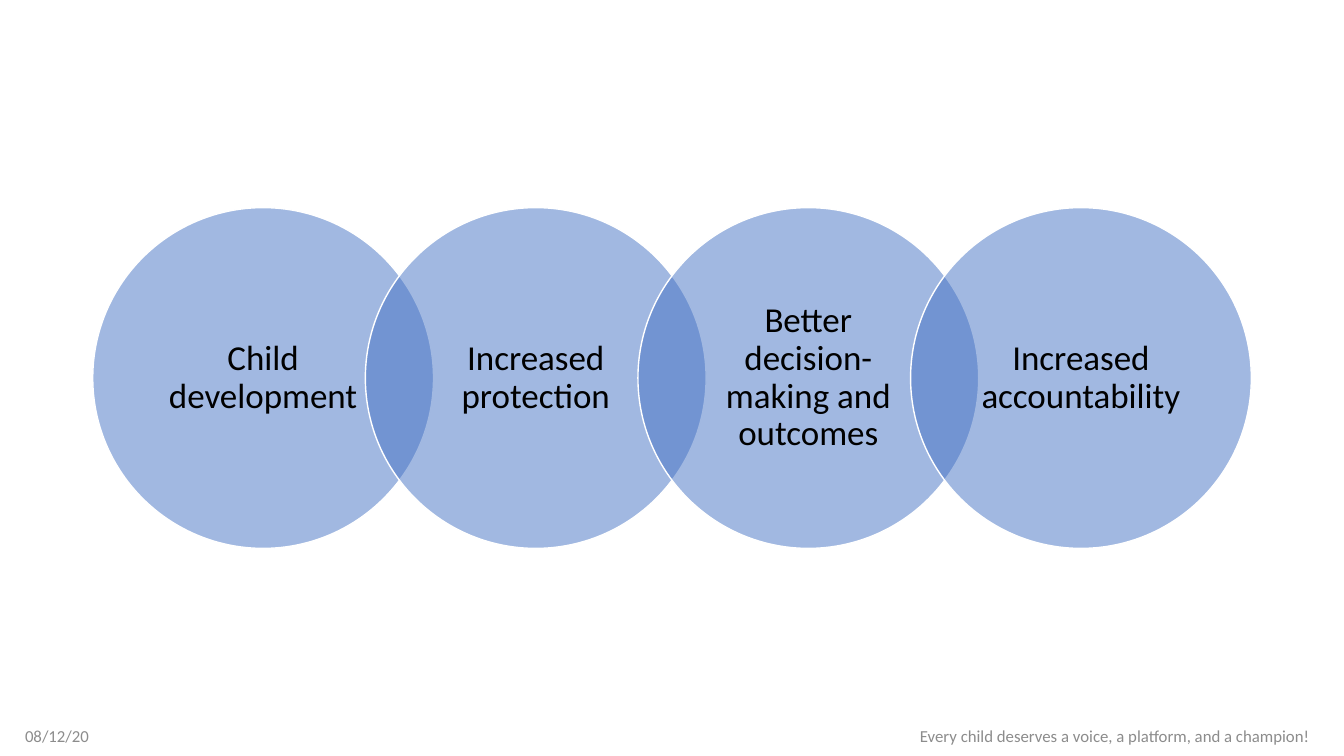
"""Build a slide of four overlapping benefit circles with a date and a motto."""
from dataclasses import dataclass
from math import sqrt

from lxml import etree
from pptx import Presentation
from pptx import util as u
from pptx.dml.color import RGBColor
from pptx.enum import shapes, text
from pptx.oxml import ns

COLORS = {"circle": "4472C4", "outline": "FFFFFF", "label": "000000", "footer": "8C8C8C"}
FONT = "Calibri"
DIAMETER = 243.4
CHAIN_LEFT, CHAIN_TOP = 66.24, 148.3
STEP = DIAMETER * 0.8
LABEL_SIDE = DIAMETER / sqrt(2)
LABEL_OFFSET = (DIAMETER - LABEL_SIDE) / 2
BENEFITS = (
    "Child development",
    "Increased protection",
    "Better decision-making and outcomes",
    "Increased accountability",
)


@dataclass(frozen=True)
class Style:
    size: float
    color: str
    align: text.PP_ALIGN
    inset_x: float = 7.2
    inset_y: float = 3.6
    line_spacing: float = 1.0
    space_after: float = 0


@dataclass(frozen=True)
class Caption:
    words: str
    left: float
    top: float
    width: float
    height: float
    style: Style


LABEL = Style(25, "label", text.PP_ALIGN.CENTER, 13.39, 2.2, 0.9)
DATE = Style(12, "footer", text.PP_ALIGN.LEFT, space_after=6)
MOTTO = Style(12, "footer", text.PP_ALIGN.CENTER, space_after=6)
FOOTERS = (
    Caption("08/12/20", 10.8, 511.2, 216, 28.8, DATE),
    Caption("Every child deserves a voice, a platform, and a champion! ",
            635.76, 511.2, 324, 28.8, MOTTO),
)


def add_caption(slide, caption: Caption) -> None:
    style = caption.style
    box = slide.shapes.add_textbox(
        u.Pt(caption.left), u.Pt(caption.top), u.Pt(caption.width), u.Pt(caption.height))
    frame = box.text_frame
    frame.word_wrap = True
    frame.vertical_anchor = text.MSO_ANCHOR.MIDDLE
    frame.margin_left = frame.margin_right = u.Pt(style.inset_x)
    frame.margin_top = frame.margin_bottom = u.Pt(style.inset_y)
    paragraph = frame.paragraphs[0]
    paragraph.alignment = style.align
    paragraph.line_spacing = style.line_spacing
    paragraph.space_after = u.Pt(style.space_after)
    run = paragraph.add_run()
    run.text = caption.words
    run.font.name = FONT
    run.font.size = u.Pt(style.size)
    run.font.color.rgb = RGBColor.from_string(COLORS[style.color])


def add_benefit(slide, words: str, left: float) -> None:
    circle = slide.shapes.add_shape(
        shapes.MSO_SHAPE.OVAL, u.Pt(left), u.Pt(CHAIN_TOP), u.Pt(DIAMETER), u.Pt(DIAMETER))
    circle.shadow.inherit = False
    circle.fill.solid()
    circle.fill.fore_color.rgb = RGBColor.from_string(COLORS["circle"])
    tint = circle.element.spPr.find(ns.qn("a:solidFill")).find(ns.qn("a:srgbClr"))
    etree.SubElement(tint, ns.qn("a:alpha"), val="50000")
    circle.line.color.rgb = RGBColor.from_string(COLORS["outline"])
    circle.line.width = u.Pt(1)
    add_caption(slide, Caption(words, left + LABEL_OFFSET, CHAIN_TOP + LABEL_OFFSET,
                               LABEL_SIDE, LABEL_SIDE, LABEL))


def main() -> None:
    deck = Presentation()
    deck.slide_width, deck.slide_height = u.Pt(960), u.Pt(540)
    slide = deck.slides.add_slide(deck.slide_layouts[6])
    for footer in FOOTERS:
        add_caption(slide, footer)
    for position, benefit in enumerate(BENEFITS):
        add_benefit(slide, benefit, CHAIN_LEFT + position * STEP)
    deck.save("out.pptx")


if __name__ == "__main__":
    main()
